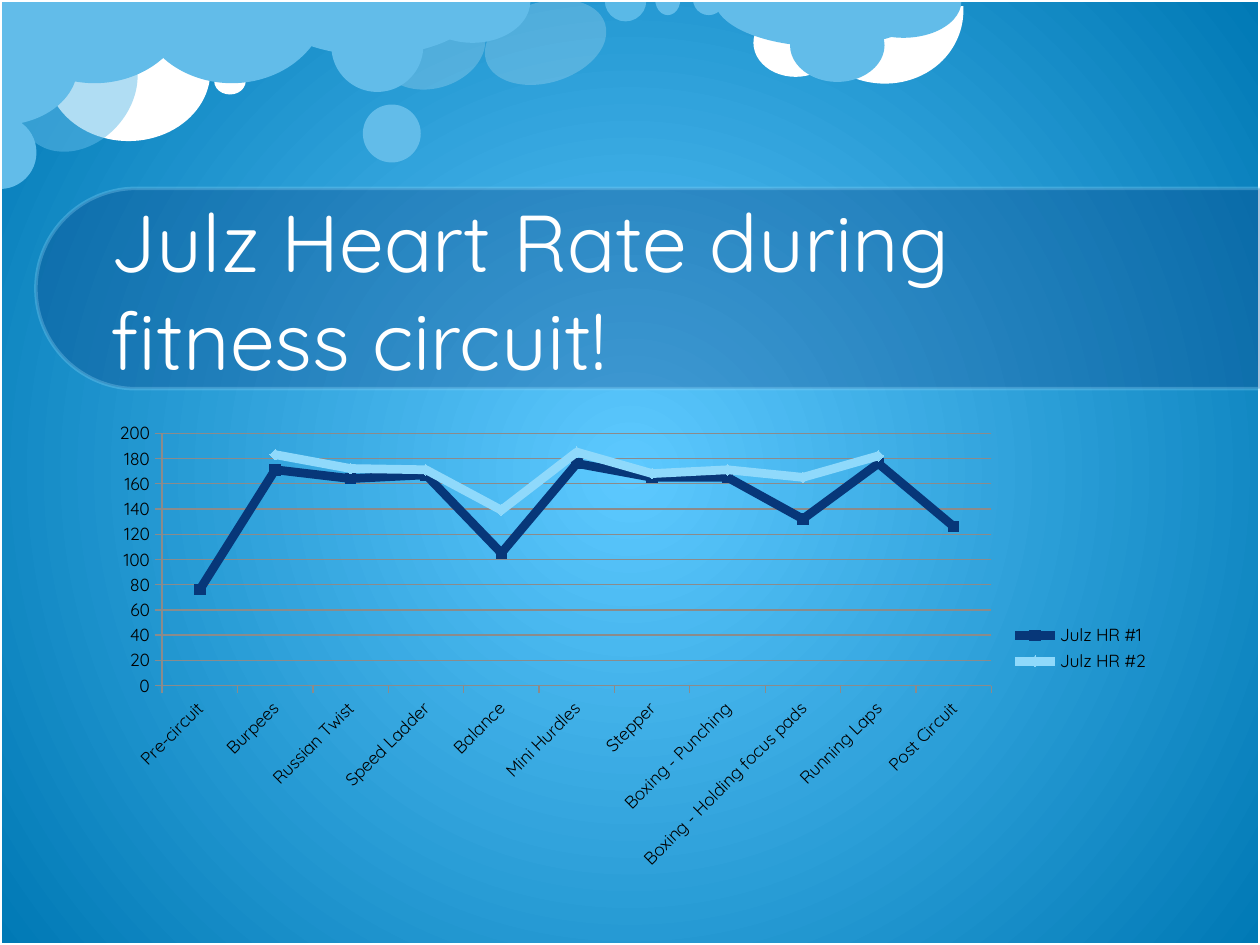
from lxml import etree
from pptx import Presentation
from pptx import util as u
from pptx.chart.data import CategoryChartData
from pptx.dml.color import RGBColor
from pptx.enum import chart as charts, shapes, text
from pptx.oxml import parse_xml
from pptx.oxml.ns import nsdecls, qn

PX = 9144  # 100 px to the inch
WHITE = RGBColor(0xFF, 0xFF, 0xFF)
BLACK = RGBColor(0x00, 0x00, 0x00)
CLOUD = RGBColor(0x62, 0xBC, 0xE9)
PALE = RGBColor(0x8F, 0xD9, 0xFB)
NAVY = RGBColor(0x07, 0x37, 0x79)
GRID = RGBColor(0x8B, 0x8B, 0x8B)
SKY_CENTRE, SKY_EDGE = RGBColor(0x5D, 0xC9, 0xFF), RGBColor(0x00, 0x79, 0xB5)
FONT = "Quicksand"

TITLE = "Julz Heart Rate during fitness circuit!"
CATEGORIES = ["Pre-circuit", "Burpees", "Russian Twist", "Speed Ladder", "Balance",
              "Mini Hurdles", "Stepper", "Boxing - Punching",
              "Boxing - Holding focus pads", "Running Laps", "Post Circuit"]
SERIES = [
    ("Julz HR #1", [76, 171, 164, 167, 105, 176, 165, 165, 132, 176, 126],
     NAVY, charts.XL_MARKER_STYLE.SQUARE),
    ("Julz HR #2", [None, 183, 172, 171, 139, 185, 168, 171, 165, 182, None],
     PALE, charts.XL_MARKER_STYLE.DIAMOND),
]

ELLIPSE = (shapes.MSO_SHAPE.OVAL, ())
HALF = (shapes.MSO_SHAPE.PIE, (0, 108))  # lower half of an ellipse
ARC = (shapes.MSO_SHAPE.ARC, (151.8, 44.48))
# kind, (left, top, width, height), colour, opacity %, rotation; back to front
CLOUDS = [
    (ELLIPSE, (311, -5, 64, 86), WHITE, 20, 72.8),
    (ELLIPSE, (37, 1, 130, 111), WHITE, 100, 0),
    (ARC, (639, -60, 121, 131), WHITE, 100, 106.5),
    (ELLIPSE, (598, 7, 67, 54), WHITE, 100, 0),
    (HALF, (-1, -66, 152, 132), CLOUD, 100, 0),
    (HALF, (208, -44, 175, 88), CLOUD, 100, 0),
    (ELLIPSE, (288, 83, 46, 46), CLOUD, 100, 0),
    (ELLIPSE, (19, 18, 85, 107), CLOUD, 50, 41.8),
    (HALF, (-29, 92, 58, 58), CLOUD, 100, 270),
    (ELLIPSE, (170, 54, 25, 21), WHITE, 100, 0),
    (HALF, (108, -66, 152, 132), CLOUD, 100, 0),
    (HALF, (567, -38, 175, 75), CLOUD, 100, 0),
    (ELLIPSE, (627, 7, 75, 58), CLOUD, 100, 0),
    (HALF, (671, -28, 92, 58), CLOUD, 100, 0),
    (ELLIPSE, (401, -16, 64, 99), WHITE, 20, 72.8),
    (HALF, (480, -16, 33, 33), PALE, 50, 0),
    (HALF, (520, -13, 20, 25), CLOUD, 100, 0),
    (HALF, (550, -13, 25, 25), CLOUD, 100, 0),
    (ELLIPSE, (263, 0, 73, 73), CLOUD, 100, 0),
    (HALF, (329, -33, 92, 67), CLOUD, 100, 0),
    (HALF, (-47, -9, 93, 124), CLOUD, 100, 270),
]
TITLE_BAR = (shapes.MSO_SHAPE.ROUND_2_SAME_RECTANGLE, (0.5, 0))
FRAME = (shapes.MSO_SHAPE.RECTANGLE, ())


def emu(box):
    return [length * PX for length in box]


def paint_sky(slide):
    """Radial gradient from the middle of the slide."""
    stops = "".join(
        f'<a:gs pos="{position}"><a:srgbClr val="{color}"/></a:gs>'
        for position, color in ((0, SKY_CENTRE), (100000, SKY_EDGE)))
    slide.background.fill.solid()
    properties = slide._element.cSld.find(qn("p:bg")).find(qn("p:bgPr"))
    properties.replace(properties.find(qn("a:solidFill")), parse_xml(
        f'<a:gradFill {nsdecls("a")} rotWithShape="1"><a:gsLst>{stops}</a:gsLst>'
        '<a:path path="circle"><a:fillToRect l="50000" t="50000" r="50000" b="50000"/>'
        '</a:path></a:gradFill>'))


def add_shape(slide, kind, box, fill=None, opacity=100, rotation=0, line=None):
    preset, adjustments = kind
    shape = slide.shapes.add_shape(preset, *emu(box))
    shape.shadow.inherit = False
    shape.rotation = rotation
    for index, value in enumerate(adjustments):
        shape.adjustments[index] = value
    if fill is None:
        shape.fill.background()
    else:
        shape.fill.solid()
        shape.fill.fore_color.rgb = fill
    if line is None:
        shape.line.fill.background()
    else:
        shape.line.color.rgb = line
        shape.line.width = u.Pt(2)
    if opacity < 100:
        for color in shape._element.spPr.iter(qn("a:srgbClr")):
            etree.SubElement(color, qn("a:alpha")).set("val", str(opacity * 1000))


def set_title(slide):
    title = slide.shapes.title
    title.left, title.top, title.width, title.height = emu((78, 150, 844, 158))
    frame = title.text_frame
    frame.text = TITLE
    frame.word_wrap = True
    frame.auto_size = text.MSO_AUTO_SIZE.NONE
    frame.vertical_anchor = text.MSO_ANCHOR.MIDDLE
    paragraph = frame.paragraphs[0]
    paragraph.alignment = text.PP_ALIGN.LEFT
    paragraph.line_spacing = u.Pt(56)
    paragraph.font.name = FONT
    paragraph.font.size = u.Pt(46)
    paragraph.font.color.rgb = WHITE
    slide.shapes._spTree.append(title._element)  # in front of the bar


def fix_plot_area(chart, **fractions):
    """Place the inner plot area by fractions of the chart."""
    plot_area = chart._chartSpace.chart.plotArea
    for old in plot_area.findall(qn("c:layout")):
        plot_area.remove(old)
    sizes = "".join(f'<c:{key} val="{value}"/>' for key, value in fractions.items())
    plot_area.insert(0, parse_xml(
        f'<c:layout {nsdecls("c")}><c:manualLayout><c:layoutTarget val="inner"/>'
        f'<c:xMode val="edge"/><c:yMode val="edge"/>{sizes}</c:manualLayout></c:layout>'))


def add_heart_rate_chart(slide):
    data = CategoryChartData()
    data.categories = CATEGORIES
    for name, values, _, _ in SERIES:
        data.add_series(name, values)
    chart = slide.shapes.add_chart(
        charts.XL_CHART_TYPE.LINE_MARKERS, *emu((78, 329, 844, 371)), data).chart
    chart.has_title = False
    chart.font.name = FONT
    chart.font.size = u.Pt(10)
    chart.font.color.rgb = BLACK
    chart.has_legend = True
    chart.legend.position = charts.XL_LEGEND_POSITION.RIGHT
    chart.legend.include_in_layout = False
    fix_plot_area(chart, x=0.06, y=0.04, w=0.78, h=0.54)

    values, categories = chart.value_axis, chart.category_axis
    values.minimum_scale, values.maximum_scale, values.major_unit = 0, 200, 20
    values.has_major_gridlines = True
    for axis in (values, categories):
        axis.major_tick_mark = charts.XL_TICK_MARK.OUTSIDE
    for line in (values.format.line, categories.format.line,
                 values.major_gridlines.format.line):
        line.color.rgb = GRID
        line.width = u.Pt(0.75)
    categories.tick_labels.font.size = u.Pt(10)
    categories._element.find(qn("c:txPr")).find(qn("a:bodyPr")).set("rot", "-2700000")

    chart.plots[0].vary_by_categories = False
    for series, (_, _, color, marker) in zip(chart.plots[0].series, SERIES):
        series.smooth = False
        series.format.line.color.rgb = color
        series.format.line.width = u.Pt(5)
        series.marker.style = marker
        series.marker.size = 6
        series.marker.format.fill.solid()
        series.marker.format.fill.fore_color.rgb = color
        series.marker.format.line.fill.background()


def main():
    presentation = Presentation()
    presentation.slide_width, presentation.slide_height = emu((1000, 750))
    slide = presentation.slides.add_slide(presentation.slide_layouts[5])
    paint_sky(slide)
    for cloud in CLOUDS:
        add_shape(slide, *cloud)
    add_shape(slide, FRAME, (0, 0, 1000, 750), line=WHITE)
    add_shape(slide, TITLE_BAR, (435, -257, 159, 972), NAVY, 30, 270, PALE)
    set_title(slide)
    add_heart_rate_chart(slide)
    presentation.save("out.pptx")


if __name__ == "__main__":
    main()
